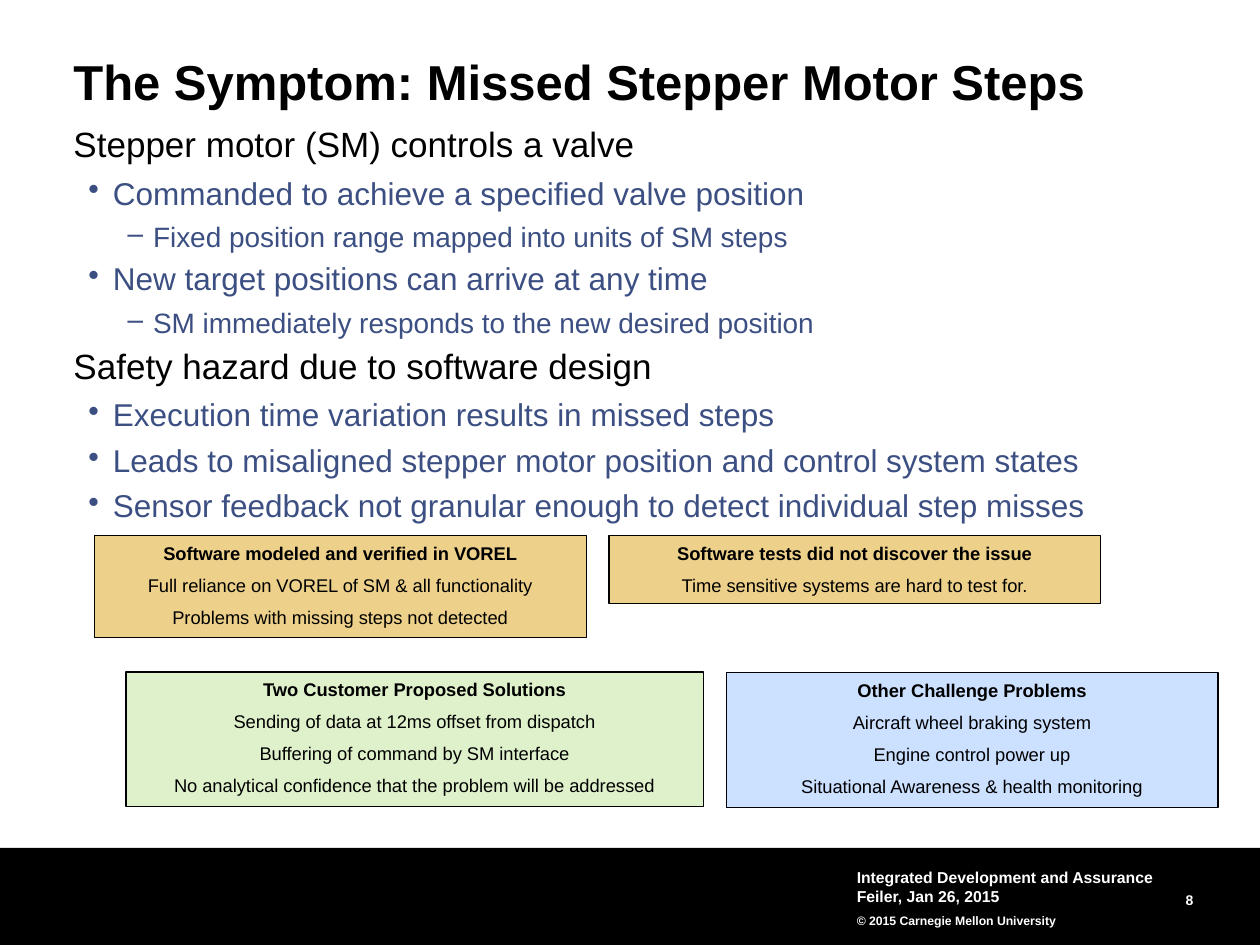
from pptx import Presentation
from pptx.dml.color import RGBColor
from pptx.enum.shapes import MSO_SHAPE
from pptx.enum.text import MSO_ANCHOR, PP_ALIGN
from pptx.oxml.ns import qn
from pptx.util import Pt
from lxml import etree

RECT = MSO_SHAPE.RECTANGLE
TOP, MIDDLE = MSO_ANCHOR.TOP, MSO_ANCHOR.MIDDLE
LEFT, CENTER, RIGHT = PP_ALIGN.LEFT, PP_ALIGN.CENTER, PP_ALIGN.RIGHT

BLACK, WHITE, NAVY = "000000", "FFFFFF", "3C4F82"
GOLD, GREEN, BLUE = "EDD18B", "DFF1CB", "CCE0FF"

LEVELS = [
    (20, BLACK, 0, 0, None),
    (18, NAVY, 22.5, -14, "•"),
    (16, NAVY, 45.5, -14.5, "–"),
]

BODY = [
    (0, "Stepper motor (SM) controls a valve"),
    (1, "Commanded to achieve a specified valve position"),
    (2, "Fixed position range mapped into units of SM steps"),
    (1, "New target positions can arrive at any time"),
    (2, "SM immediately responds to the new desired position"),
    (0, "Safety hazard due to software design"),
    (1, "Execution time variation results in missed steps"),
    (1, "Leads to misaligned stepper motor position and control system states"),
    (1, "Sensor feedback not granular enough to detect individual step misses"),
]

CARDS = [
    (54, 306, 281, 58.5, GOLD, [
        "Software modeled and verified in VOREL",
        "Full reliance on VOREL of SM & all functionality",
        "Problems with missing steps not detected"]),
    (72, 384, 330, 77, GREEN, [
        "Two Customer Proposed Solutions",
        "Sending of data at 12ms offset from dispatch",
        "Buffering of command by SM interface",
        "No analytical confidence that the problem will be addressed"]),
    (348, 306, 281, 39, GOLD, [
        "Software tests did not discover the issue",
        "Time sensitive systems are hard to test for."]),
    (415, 384.5, 281, 77, BLUE, [
        "Other Challenge Problems",
        "Aircraft wheel braking system",
        "Engine control power up",
        "Situational Awareness & health monitoring"]),
]


def color(code):
    return RGBColor.from_string(code)


def set_frame(shape, inset, anchor):
    frame = shape.text_frame
    frame.word_wrap = True
    frame.vertical_anchor = anchor
    frame.margin_left = frame.margin_right = Pt(inset)
    frame.margin_top = frame.margin_bottom = Pt(min(inset, 3.6))
    return frame


def add_text(slide, x, y, w, h, inset=0, anchor=TOP):
    box = slide.shapes.add_textbox(Pt(x), Pt(y), Pt(w), Pt(h))
    return set_frame(box, inset, anchor)


def add_rect(slide, x, y, w, h, fill, line=None):
    shape = slide.shapes.add_shape(RECT, Pt(x), Pt(y), Pt(w), Pt(h))
    shape.shadow.inherit = False
    shape.fill.solid()
    shape.fill.fore_color.rgb = color(fill)
    if line:
        shape.line.color.rgb = color(line)
        shape.line.width = Pt(0.75)
    else:
        shape.line.fill.background()
    return shape


def add_line(frame, text, size, tint, bold=False, align=LEFT):
    first = frame.paragraphs[0]
    para = frame.add_paragraph() if first.runs else first
    para.add_run().text = text
    para.alignment = align
    font = para.font
    font.name, font.size, font.bold = "Arial", Pt(size), bold
    font.color.rgb = color(tint)
    return para


def set_bullet(para, mark, left, hang):
    props = para._p.get_or_add_pPr()
    props.set("marL", str(Pt(left)))
    props.set("indent", str(Pt(hang)))
    bullet = etree.Element(qn("a:buChar"), char=mark)
    props.find(qn("a:defRPr")).addprevious(bullet)


def add_body(slide):
    frame = add_text(slide, 42, 72, 642, 378)
    for level, text in BODY:
        size, tint, left, hang, mark = LEVELS[level]
        para = add_line(frame, text, size, tint)
        para.level = level
        para.line_spacing = 0.95
        para.space_after = Pt(0.3 * size)
        if mark:
            set_bullet(para, mark, left, hang)


def add_card(slide, x, y, w, h, fill, lines):
    shape = add_rect(slide, x, y, w, h, fill, BLACK)
    frame = set_frame(shape, 7.2, TOP)
    for i, text in enumerate(lines):
        para = add_line(frame, text, 10.5, BLACK, i == 0, CENTER)
        if i:
            para.space_before = Pt(5.75)


def add_footer(slide):
    add_rect(slide, 0, 484.5, 720, 55.5, BLACK)
    frame = add_text(slide, 616, 506, 66, 13, 0, MIDDLE)
    add_line(frame, "8", 8, WHITE, True, RIGHT).line_spacing = Pt(13)
    frame = add_text(slide, 486, 492, 180, 42, 3.6, MIDDLE)
    add_line(frame, "Integrated Development and Assurance", 9, WHITE, True)
    add_line(frame, "Feiler, Jan 26, 2015", 9, WHITE, True)
    para = add_line(frame, "© 2015 Carnegie Mellon University", 7, WHITE, True)
    para.line_spacing = 1.5


def main():
    deck = Presentation()
    deck.slide_width, deck.slide_height = Pt(720), Pt(540)
    slide = deck.slides.add_slide(deck.slide_layouts[6])
    add_footer(slide)
    frame = add_text(slide, 42, 33, 642, 30)
    title = "The Symptom: Missed Stepper Motor Steps"
    add_line(frame, title, 28, BLACK, True).line_spacing = 0.9
    add_body(slide)
    for card in CARDS:
        add_card(slide, *card)
    deck.save("out.pptx")


if __name__ == "__main__":
    main()
